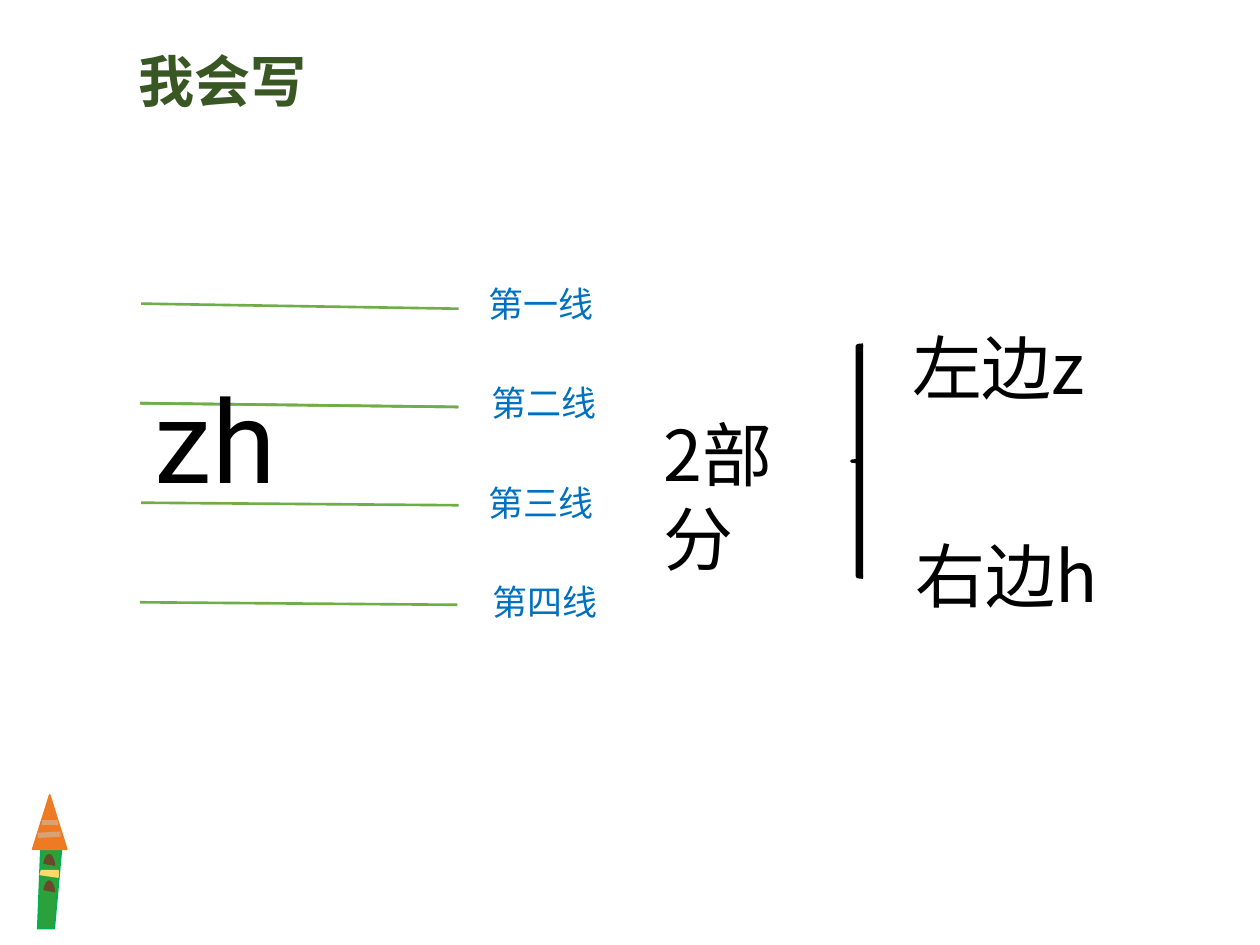
from lxml import etree
from pptx import Presentation
from pptx import util as u
from pptx.dml.color import RGBColor
from pptx.enum import shapes as kinds, text as t
from pptx.oxml import ns

HAN, LATIN = "Noto Sans CJK SC", "Roboto"


def rgb(hex_code):
    """Turn a hex string into a colour."""
    return RGBColor.from_string(hex_code)


def write(holder, words, size=40, font=HAN, color="000000", bold=False,
          align=t.PP_ALIGN.LEFT, wrap=True):
    """Fill a text holder with one formatted paragraph."""
    frame = holder.text_frame
    frame.word_wrap = wrap
    frame.auto_size = t.MSO_AUTO_SIZE.NONE
    frame.vertical_anchor = t.MSO_ANCHOR.TOP
    paragraph = frame.paragraphs[0]
    paragraph.alignment = align
    run = paragraph.add_run()
    run.text = words
    run.font.size, run.font.bold, run.font.name = u.Pt(size), bold, font
    run.font.color.rgb = rgb(color)
    east_asian = etree.SubElement(run.font._element, ns.qn("a:ea"))
    east_asian.set("typeface", font)


def label(shapes, words, left, top, width, height, **style):
    """Add a text box at a place given in inches."""
    box = shapes.add_textbox(*map(u.Inches, (left, top, width, height)))
    write(box, words, **style)


def rule(shapes, start, end, color, weight):
    """Draw a straight line without a shadow."""
    line = shapes.add_connector(
        kinds.MSO_CONNECTOR.STRAIGHT, *map(u.Inches, (*start, *end)))
    line.line.color.rgb = rgb(color)
    line.line.width = u.Pt(weight)
    etree.SubElement(line._element.spPr, ns.qn("a:effectLst"))


def paint(shape, fill, outline=None, weight=1):
    """Give a shape a flat fill and an outline."""
    shape.shadow.inherit = False
    shape.fill.solid()
    shape.fill.fore_color.rgb = rgb(fill)
    shape.line.color.rgb = rgb(outline or fill)
    shape.line.width = u.Pt(weight)


def preset(shapes, kind, left, top, width, height, color, weight=1):
    """Add a preset shape in one colour."""
    shape = shapes.add_shape(kind, *map(u.Inches, (left, top, width, height)))
    paint(shape, color, weight=weight)
    return shape


def polygon(shapes, points, fill, outline=None):
    """Draw a closed outline through points given in inches."""
    corners = [(u.Inches(x), u.Inches(y)) for x, y in points]
    builder = shapes.build_freeform(*corners[0], scale=1.0)
    builder.add_line_segments(corners[1:], close=True)
    paint(builder.convert_to_shape(), fill, outline)


def pencil(slide, left, top):
    """Draw the pencil as a group hanging from its top left corner."""
    parts = slide.shapes.add_group_shape().shapes

    def place(*offsets):
        return [(left + x, top + y) for x, y in offsets]

    def spot(y):
        mark = preset(parts, kinds.MSO_SHAPE.CHORD, left, top + y, 0.26, 0.09, "69482C")
        mark.rotation = 90
        mark.adjustments[0], mark.adjustments[1] = 89.452, 132.133

    polygon(parts, place((0.07, 0.3), (0.23, 0.4), (0.17, 1.06), (0.04, 1.06)),
            "2CA03B", "00B050")
    preset(parts, kinds.MSO_SHAPE.ISOSCELES_TRIANGLE, left, top, 0.27, 0.43, "EE7A24")
    spot(0.56)
    polygon(parts, place((0.07, 0.6), (0.2, 0.6), (0.2, 0.65), (0.06, 0.63)), "FFD966")
    spot(0.77)
    for ends in (((0.07, 0.22), (0.2, 0.22)), ((0.04, 0.32), (0.22, 0.31))):
        rule(parts, *place(*ends), "D9A275", 3)


def heading(slide, words, left, top, width, height):
    """Place the title."""
    title = slide.shapes.title
    title.left, title.top, title.width, title.height = map(
        u.Inches, (left, top, width, height))
    write(title, words, size=32, color="385723", bold=True,
          align=t.PP_ALIGN.CENTER, wrap=False)


def writing_grid(slide, left, top, pitch=0.79):
    """Draw the four-line grid with the letters and the line names."""
    strokes = ((0, 0.01, 0.04), (1, 0.01, 0.03), (1, 0, 0.03), (2, 0.01, 0.02), (3, 0, 0.02))
    for row, shift, drop in strokes:
        x, y = left + shift, top + row * pitch
        rule(slide.shapes, (x, y), (x + 2.52, y + drop), "70AD47", 1.5)
    label(slide.shapes, "zh", left + 0.02, top + 0.46, 1.94, 1.21, size=66, font=LATIN)
    names = (("第一线", 2.67), ("第二线", 2.69), ("第三线", 2.67), ("第四线", 2.7))
    for row, (name, shift) in enumerate(names):
        label(slide.shapes, name, left + shift, top - 0.22 + row * pitch, 1.17, 0.44,
              size=20, color="0070C0")


def parts_summary(slide, left, top):
    """Show the two parts of the letter pair beside a brace."""
    label(slide.shapes, "2部分", left, top + 0.69, 1.39, 1.45)
    preset(slide.shapes, kinds.MSO_SHAPE.LEFT_BRACE, left + 1.59, top + 0.21,
           0.09, 1.84, "000000", 2)
    label(slide.shapes, "左边z", left + 1.97, top, 1.59, 0.77)
    label(slide.shapes, "右边h", left + 2, top + 1.65, 1.76, 0.77)


def main():
    """Build and save the slide."""
    deck = Presentation()
    deck.slide_width, deck.slide_height = u.Inches(10), u.Inches(7.5)
    slide = deck.slides.add_slide(deck.slide_layouts[5])
    pencil(slide, 0.26, 6.31)
    heading(slide, "我会写", 0.99, 0.32, 1.55, 0.64)
    writing_grid(slide, 1.11, 2.41)
    parts_summary(slide, 5.17, 2.53)
    deck.save("out.pptx")


if __name__ == "__main__":
    main()
